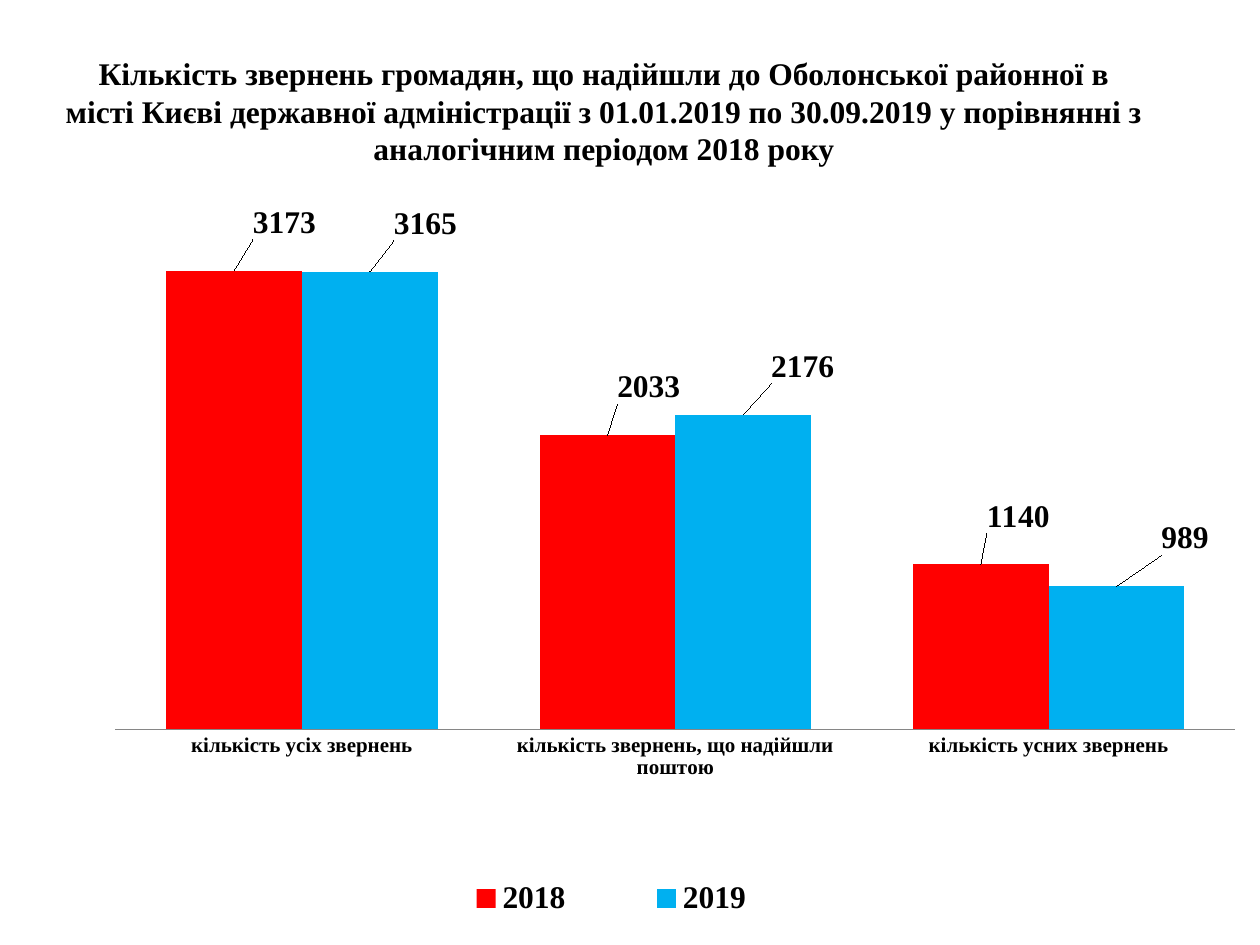
from dataclasses import dataclass

from lxml.etree import SubElement
from pptx import Presentation
from pptx.chart.data import CategoryChartData
from pptx.dml.color import RGBColor
from pptx.enum.chart import (XL_CHART_TYPE, XL_LABEL_POSITION,
                             XL_LEGEND_POSITION, XL_TICK_MARK)
from pptx.enum.text import MSO_ANCHOR, PP_ALIGN
from pptx.oxml.ns import qn
from pptx.util import Emu, Pt

# Content
TITLE = ("Кількість звернень громадян, що надійшли до Оболонської районної в "
         "місті Києві державної адміністрації з 01.01.2019 по 30.09.2019 "
         "у порівнянні з аналогічним періодом 2018 року")
CATEGORIES = ["кількість усіх звернень",
              "кількість звернень, що надійшли поштою",
              "кількість усних звернень"]
YEARS = [
    {"name": "2018", "counts": (3173, 2033, 1140), "color": "FF0000",
     "label_shifts": (51, 41, 38)},
    {"name": "2019", "counts": (3165, 2176, 989), "color": "00B0F0",
     "label_shifts": (55, 59, 68)},
]
LABEL_RISE = -26

# Places in px: left, top, width, height
SLIDE = (1260, 945)
TITLE_BOX = (53, 32, 1102, 157)
CHART_BOX = (-32, 158, 1292, 787)
PLOT_BOX = (147, 65, 1120, 506)      # inside the chart
LEGEND_BOX = (428, 715, 432, 50)     # inside the chart


@dataclass(frozen=True)
class Theme:
    font: str = "Times New Roman"
    text: str = "000000"
    axis: str = "868686"
    large: int = 18
    small: int = 12


THEME = Theme()


def px(length):
    return Emu(round(length * 914400 / 126))


def style(font, size):
    font.name = THEME.font
    font.size = Pt(size)
    font.bold = True
    font.color.rgb = RGBColor.from_string(THEME.text)


def manual_layout(parent, index, settings):
    """Put a manual layout into a chart element, replacing any other."""
    for old in parent.findall(qn("c:layout")):
        parent.remove(old)
    layout = SubElement(parent, qn("c:layout"))
    parent.insert(index, layout)
    manual = SubElement(layout, qn("c:manualLayout"))
    for tag, setting in settings.items():
        SubElement(manual, qn(f"c:{tag}")).set("val", str(setting))


def box_settings(box):
    _, _, width, height = CHART_BOX
    shares = [round(part / whole, 3)
              for part, whole in zip(box, (width, height) * 2)]
    return {"xMode": "edge", "yMode": "edge", **dict(zip("xywh", shares))}


def add_title(slide):
    frame = slide.shapes.add_textbox(*map(px, TITLE_BOX)).text_frame
    frame.word_wrap = True
    frame.vertical_anchor = MSO_ANCHOR.MIDDLE
    frame.text = TITLE
    paragraph = frame.paragraphs[0]
    paragraph.alignment = PP_ALIGN.CENTER
    style(paragraph.runs[0].font, THEME.large)


def format_series(series, year):
    series.format.fill.solid()
    series.format.fill.fore_color.rgb = RGBColor.from_string(year["color"])
    series.invert_if_negative = False
    labels = series.data_labels
    labels.show_value = True
    style(labels.font, THEME.large)
    for index, shift in enumerate(year["label_shifts"]):
        label = series.points[index].data_label
        style(label.font, THEME.large)
        label.position = XL_LABEL_POSITION.OUTSIDE_END
        element = labels._element.findall(qn("c:dLbl"))[index]
        manual_layout(element, 1, {"x": round(shift / CHART_BOX[2], 3),
                                   "y": round(LABEL_RISE / CHART_BOX[3], 3)})


def add_counts_chart(slide):
    chart_data = CategoryChartData()
    chart_data.categories = CATEGORIES
    for year in YEARS:
        chart_data.add_series(year["name"], year["counts"])
    chart = slide.shapes.add_chart(XL_CHART_TYPE.COLUMN_CLUSTERED,
                                   *map(px, CHART_BOX), chart_data).chart
    chart.has_title = False
    style(chart.font, THEME.large)

    # Columns and their labels
    plot = chart.plots[0]
    plot.gap_width = 75
    plot.overlap = 0
    plot.vary_by_categories = False
    for series, year in zip(plot.series, YEARS):
        format_series(series, year)

    # Axes
    counts = chart.value_axis
    counts.minimum_scale, counts.maximum_scale = 0, 3500
    counts.has_major_gridlines = False
    counts.visible = False
    kinds = chart.category_axis
    kinds.major_tick_mark = kinds.minor_tick_mark = XL_TICK_MARK.NONE
    kinds.format.line.color.rgb = RGBColor.from_string(THEME.axis)
    kinds.format.line.width = Pt(0.75)
    style(kinds.tick_labels.font, THEME.small)

    # Legend and plot places
    chart.has_legend = True
    legend = chart.legend
    legend.position = XL_LEGEND_POSITION.BOTTOM
    legend.include_in_layout = False
    style(legend.font, THEME.large)
    manual_layout(legend._element, 1, box_settings(LEGEND_BOX))
    plot_area = chart._chartSpace.chart.plotArea
    manual_layout(plot_area, 0,
                  {"layoutTarget": "inner", **box_settings(PLOT_BOX)})


def main():
    deck = Presentation()
    deck.slide_width, deck.slide_height = map(px, SLIDE)
    slide = deck.slides.add_slide(deck.slide_layouts[6])
    add_title(slide)
    add_counts_chart(slide)
    deck.save("out.pptx")


if __name__ == "__main__":
    main()
